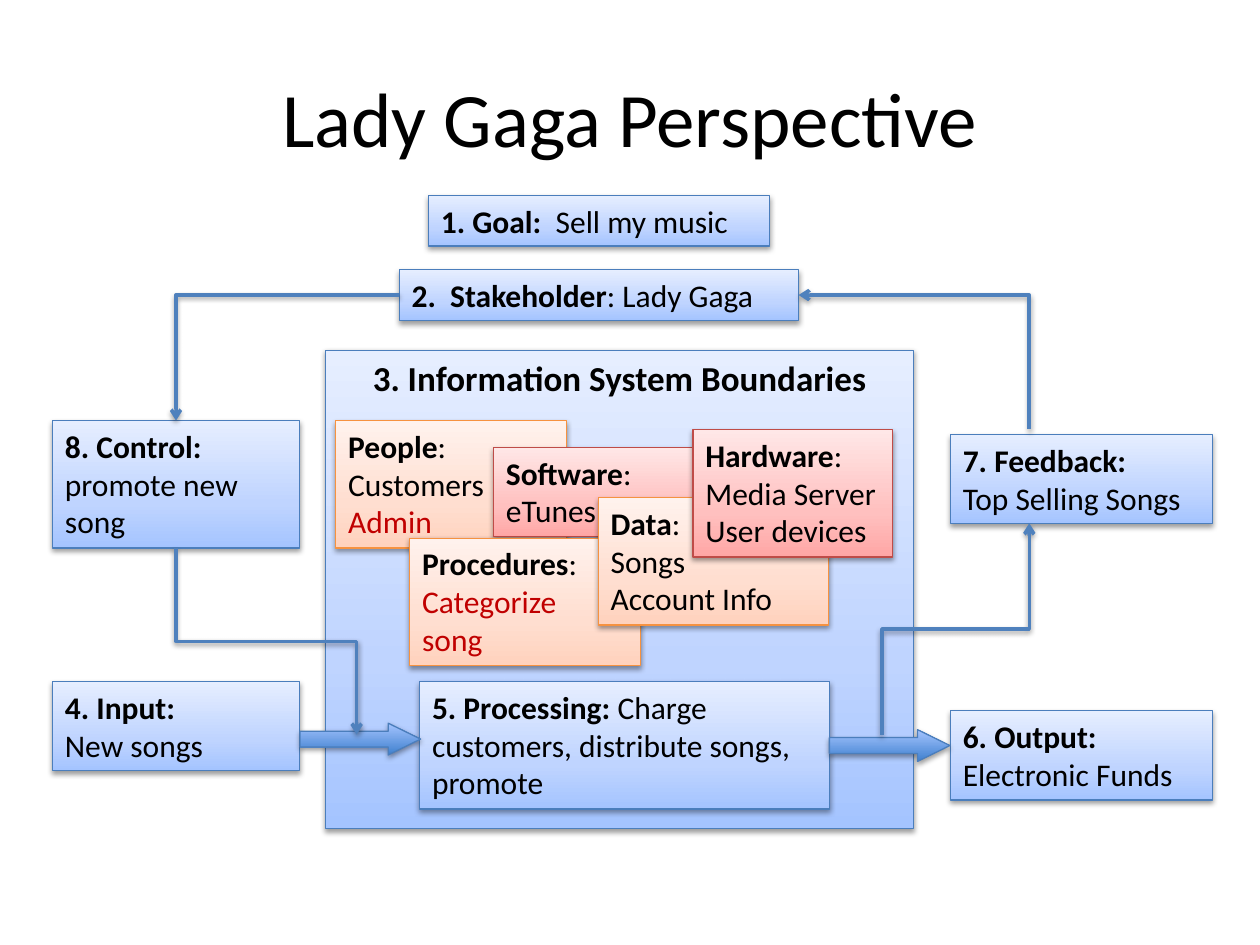
from copy import deepcopy

from lxml import etree
from pptx import Presentation
from pptx.dml.color import RGBColor
from pptx.enum import shapes, text
from pptx.oxml.ns import qn
from pptx.util import Cm, Pt

BLACK = RGBColor(0x00, 0x00, 0x00)
RED = RGBColor(0xC0, 0x00, 0x00)
FLOW_LINE = RGBColor(0x4F, 0x81, 0xBD)
BLUE_LINE = RGBColor(0x4B, 0x7E, 0xBC)
ORANGE_LINE = RGBColor(0xF6, 0x92, 0x40)
PINK_LINE = RGBColor(0xBF, 0x4C, 0x48)
SKY = RGBColor(0xA4, 0xC4, 0xFF)

# Each look: outline colour, then gradient stops from bottom to top
BLUE = (BLUE_LINE, [(0, SKY), (0.35, RGBColor(0xBF, 0xD4, 0xFF)),
                    (1, RGBColor(0xE6, 0xEE, 0xFF))])
ORANGE = (ORANGE_LINE, [(0, RGBColor(0xFF, 0xD2, 0xBD)), (0.35, RGBColor(0xFF, 0xDE, 0xD0)),
                        (1, RGBColor(0xFF, 0xF2, 0xED))])
PINK = (PINK_LINE, [(0, RGBColor(0xFF, 0xA6, 0xA5)), (0.35, RGBColor(0xFF, 0xC0, 0xBF)),
                    (1, RGBColor(0xFF, 0xE7, 0xE7))])
DEEP_BLUE = (BLUE_LINE, [(0, RGBColor(0x3F, 0x80, 0xCE)), (1, SKY)])


def add_soft_shadow(properties):
    effects = properties.find(qn("a:effectLst"))
    if effects is None:
        effects = etree.SubElement(properties, qn("a:effectLst"))
    shadow = etree.SubElement(effects, qn("a:outerShdw"), blurRad=str(Pt(3.1)),
                              dist=str(Pt(1.6)), dir="5400000", rotWithShape="0")
    colour = etree.SubElement(shadow, qn("a:srgbClr"), val=str(BLACK))
    etree.SubElement(colour, qn("a:alpha"), val="38000")


def add_block(slide, preset, box, look):
    """Add a preset shape with an upward gradient, thin outline and soft shadow."""
    outline, stops = look
    block = slide.shapes.add_shape(preset, *(Cm(v) for v in box))
    block.line.color.rgb = outline
    block.line.width = Pt(0.75)
    block.fill.gradient()
    block.fill.gradient_angle = 90
    properties = block._element.spPr
    stop_list = properties.find(".//" + qn("a:gsLst"))
    for _ in stops[2:]:
        stop_list.append(deepcopy(stop_list[-1]))
    for stop, (position, colour) in zip(block.fill.gradient_stops, stops):
        stop.position = position
        stop.color.rgb = colour
    block.shadow.inherit = False
    add_soft_shadow(properties)
    return block


def add_card(slide, box, look, heading, same_line="", lines=(), red_lines=(), size=18):
    """Add a box with a bold heading, plain text beside it and lines below it."""
    card = add_block(slide, shapes.MSO_SHAPE.RECTANGLE, box, look)
    frame = card.text_frame
    frame.word_wrap = True
    frame.vertical_anchor = text.MSO_ANCHOR.TOP
    frame.text = "\n".join([heading, *lines, *red_lines])
    frame.paragraphs[0].add_run().text = same_line
    first_red = 1 + len(lines)
    for row, paragraph in enumerate(frame.paragraphs):
        paragraph.alignment = text.PP_ALIGN.LEFT
        for place, run in enumerate(paragraph.runs):
            run.font.name = "Calibri"
            run.font.size = Pt(size)
            run.font.bold = row == 0 and place == 0
            run.font.color.rgb = RED if row >= first_red else BLACK
    return card


def add_elbow(slide, start, end, preset="bentConnector3", bend=0.5, upright=False):
    """Add a bent arrow; an upright one leaves and arrives vertically."""
    (x1, y1), (x2, y2) = start, end
    dx, dy = x2 - x1, y2 - y1
    mid_x, mid_y = (x1 + x2) / 2, (y1 + y2) / 2
    if upright:  # drawn lying down, then turned a quarter clockwise
        dx, dy = dy, -dx
    corners = (mid_x - dx / 2, mid_y - dy / 2, mid_x + dx / 2, mid_y + dy / 2)
    elbow = slide.shapes.add_connector(shapes.MSO_CONNECTOR.ELBOW, *(Cm(v) for v in corners))
    elbow.line.color.rgb = FLOW_LINE
    elbow.line.width = Pt(2)
    properties = elbow._element.spPr
    if upright:
        properties.find(qn("a:xfrm")).set("rot", "5400000")
    geometry = properties.find(qn("a:prstGeom"))
    geometry.set("prst", preset)
    if preset == "bentConnector3":
        adjusts = geometry.find(qn("a:avLst"))
        if adjusts is None:
            adjusts = etree.SubElement(geometry, qn("a:avLst"))
        etree.SubElement(adjusts, qn("a:gd"), name="adj1", fmla=f"val {round(bend * 100000)}")
    etree.SubElement(properties.find(qn("a:ln")), qn("a:tailEnd"), type="arrow")
    add_soft_shadow(properties)


def add_title(slide, box):
    title = slide.shapes.title
    title.left, title.top, title.width, title.height = (Cm(v) for v in box)
    title.text_frame.text = "Lady Gaga Perspective"
    font = title.text_frame.paragraphs[0].runs[0].font
    font.name, font.size, font.color.rgb = "Calibri", Pt(44), BLACK


def add_system(slide, box):
    """Add the system boundary with its overlapping components and processing."""
    left, top = box[:2]
    boundary = add_card(slide, box, BLUE, "3. Information System Boundaries", size=20)
    boundary.text_frame.paragraphs[0].alignment = text.PP_ALIGN.CENTER
    components = [
        (0.21, 1.42, 4.65, 2.57, ORANGE, "People", ":", ["Customers"], ["Admin"]),
        (3.39, 1.96, 4.65, 1.8, PINK, "Software", ":", ["eTunes"], []),
        (1.7, 3.79, 4.65, 2.57, ORANGE, "Procedures", ":", [], ["Categorize", "song"]),
        (5.5, 2.97, 4.65, 2.57, ORANGE, "Data", ":", ["Songs", "Account Info"], []),
        (7.41, 1.6, 4.02, 2.57, PINK, "Hardware", ":", ["Media Server", "User devices"], []),
        (1.9, 6.68, 8.26, 2.57, BLUE, "5. Processing: ",
         "Charge customers, distribute songs, promote", [], []),
    ]
    for x, y, width, height, *content in components:
        add_card(slide, (left + x, top + y, width, height), *content)


def add_purpose(slide, box):
    """Add the goal above the stakeholder, filling the box's width."""
    left, top, width, height = box
    row = 1.02
    add_card(slide, (left + 0.59, top, 6.88, row), BLUE, "1. Goal:  ", "Sell my music")
    add_card(slide, (left, top + height - row, width, row), BLUE,
             "2.  Stakeholder", ": Lady Gaga")


def add_side(slide, box, upper, lower):
    """Add a column of two cards; each is (height, heading, line)."""
    left, top, width, height = box
    for y, (tall, heading, line) in ((top, upper), (top + height - lower[0], lower)):
        add_card(slide, (left, y, width, tall), BLUE, heading, lines=[line])


def add_flows(slide):
    for left, top in ((6.05, 14.58), (16.72, 14.71)):
        arrow = add_block(slide, shapes.MSO_SHAPE.RIGHT_ARROW, (left, top, 2.43, 0.64), DEEP_BLUE)
        arrow.adjustments[0], arrow.adjustments[1] = 0.5, 1.02
    add_elbow(slide, (17.78, 14.81), (20.75, 10.55), upright=True)
    add_elbow(slide, (20.75, 8.66), (16.1, 5.95), bend=0)
    add_elbow(slide, (8.05, 5.95), (3.55, 8.48), preset="bentConnector2")
    add_elbow(slide, (3.55, 11.05), (7.19, 14.81), upright=True)


def main():
    deck = Presentation()
    deck.slide_width, deck.slide_height = Cm(25.4), Cm(19.05)
    slide = deck.slides.add_slide(deck.slide_layouts[5])
    add_title(slide, (1.27, 0.76, 22.86, 3.18))
    add_system(slide, (6.56, 7.06, 11.86, 9.65))
    add_purpose(slide, (8.05, 3.94, 8.05, 2.52))
    add_side(slide, (1.06, 8.48, 4.98, 7.06),
             (2.57, "8. Control:", "promote new song"), (1.8, "4. Input:", "New songs"))
    add_side(slide, (19.16, 8.76, 5.28, 7.37),
             (1.8, "7. Feedback:", "Top Selling Songs"), (1.8, "6. Output:", "Electronic Funds"))
    add_flows(slide)
    deck.save("out.pptx")


if __name__ == "__main__":
    main()
